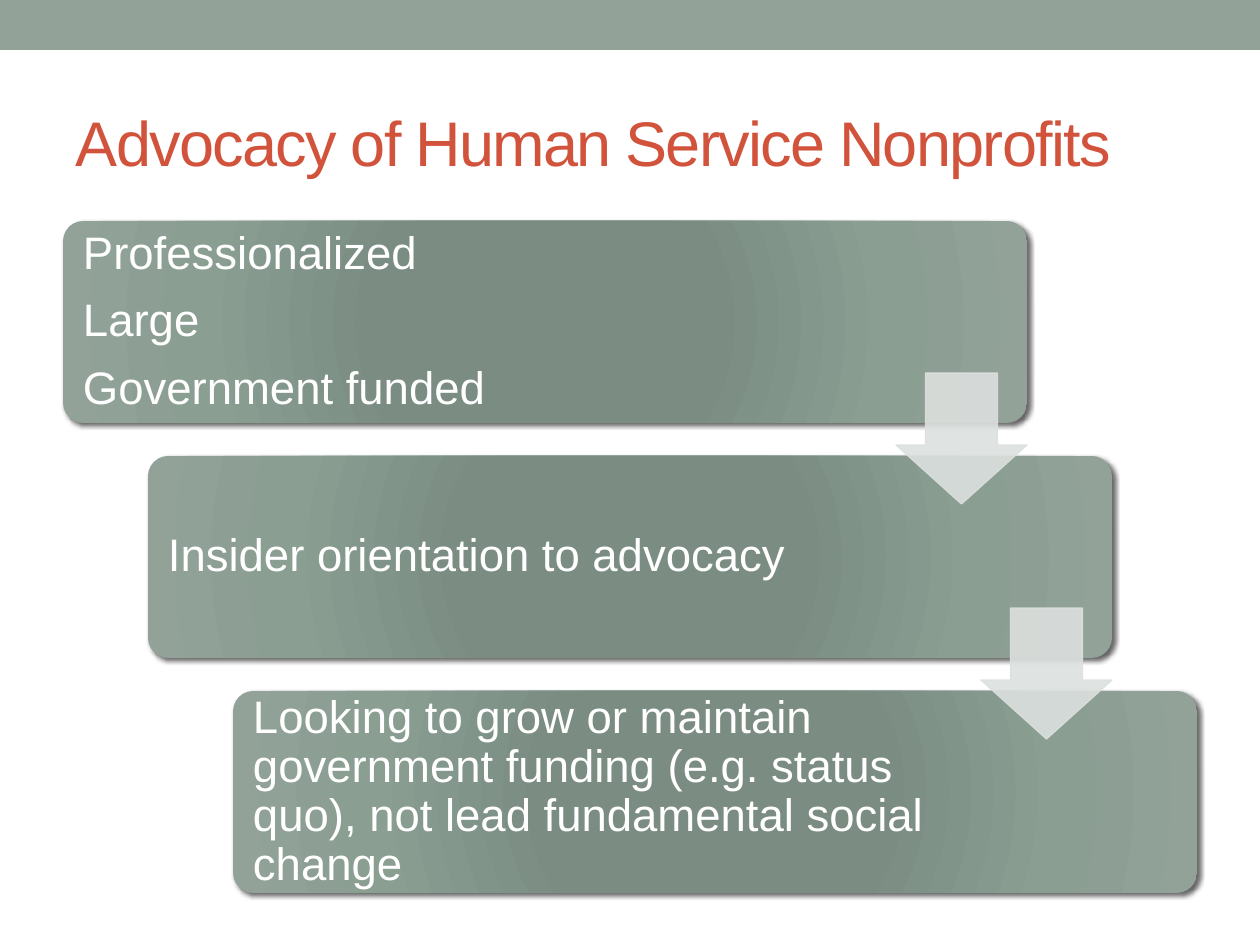
from lxml.etree import SubElement
from pptx import Presentation
from pptx.dml.color import RGBColor
from pptx.enum.shapes import MSO_SHAPE
from pptx.enum.text import MSO_ANCHOR
from pptx.oxml import parse_xml
from pptx.oxml.ns import nsdecls, qn
from pptx.util import Emu, Pt

PX = 914400 / 126

SAGE = RGBColor(0x93, 0xA2, 0x99)
RUST = RGBColor(0xD2, 0x53, 0x3C)
WHITE = RGBColor(0xFF, 0xFF, 0xFF)
MIST = RGBColor(0xDC, 0xE0, 0xDE)
BLACK = RGBColor(0, 0, 0)
STOPS = [(0, RGBColor(0x7B, 0x8E, 0x82)), (34, RGBColor(0x7B, 0x8D, 0x83)),
         (70, RGBColor(0x8A, 0x9E, 0x92)), (100, SAGE)]


def px(n):
    return Emu(round(n * PX))


class Deck:
    font = "Arial"

    def __init__(self, width, height):
        self.prs = Presentation()
        self.prs.slide_width, self.prs.slide_height = px(width), px(height)
        self.s = self.prs.slides.add_slide(self.prs.slide_layouts[6])

    def shape(self, kind, x, y, w, h, fill, adj=()):
        sp = self.s.shapes.add_shape(kind, px(x), px(y), px(w), px(h))
        sp.shadow.inherit = False
        sp.fill.solid()
        sp.fill.fore_color.rgb = fill
        sp.line.fill.background()
        for i, value in enumerate(adj):
            sp.adjustments[i] = value
        return sp

    def card(self, x, y, w, h):
        sp = self.shape(MSO_SHAPE.ROUNDED_RECTANGLE, x, y, w, h, SAGE, [0.1])
        spPr = sp.fill._xPr
        # Radial gradient
        stops = "".join(f'<a:gs pos="{pos * 1000}"><a:srgbClr val="{color}"/></a:gs>'
                        for pos, color in STOPS)
        grad = parse_xml(
            f'<a:gradFill {nsdecls("a")} rotWithShape="1"><a:gsLst>{stops}</a:gsLst>'
            '<a:path path="circle"><a:fillToRect l="100000" t="100000" r="100000" '
            'b="100000"/></a:path></a:gradFill>')
        spPr.replace(spPr.find(qn("a:solidFill")), grad)
        # Drop shadow
        shadow = SubElement(spPr.find(qn("a:effectLst")), qn("a:outerShdw"),
                            blurRad=str(Pt(3)), dist=str(Pt(2)),
                            dir=str(45 * 60000), algn="ctr", rotWithShape="0")
        color = SubElement(shadow, qn("a:srgbClr"), val=str(BLACK))
        SubElement(color, qn("a:alpha"), val="60000")

    def arrow(self, x, y, size):
        sp = self.shape(MSO_SHAPE.DOWN_ARROW, x, y, size, size, MIST, [0.55, 0.45])
        sp.line.color.rgb = MIST
        sp.line.width = Pt(0.75)
        for color in sp.fill._xPr.iter(qn("a:srgbClr")):
            SubElement(color, qn("a:alpha"), val="90000")

    def text(self, x, y, w, h, lines, size, color, inset=(13, 6),
             line_spacing=None, after=None, tracking=None):
        tf = self.s.shapes.add_textbox(px(x), px(y), px(w), px(h)).text_frame
        tf.word_wrap = True
        tf.vertical_anchor = MSO_ANCHOR.MIDDLE
        tf.margin_left = tf.margin_right = px(inset[0])
        tf.margin_top = tf.margin_bottom = px(inset[1])
        for i, line in enumerate(lines):
            p = tf.add_paragraph() if i else tf.paragraphs[0]
            p.line_spacing = line_spacing
            p.space_after = after
            r = p.add_run()
            r.text = line
            r.font.name, r.font.size = self.font, Pt(size)
            r.font.color.rgb = color
            if tracking is not None:
                r.font._element.set("spc", str(tracking * 100))


def main():
    deck = Deck(1260, 945)

    # Top band and title
    deck.shape(MSO_SHAPE.RECTANGLE, 0, 0, 1260, 50, SAGE)
    deck.text(63, 73, 1134, 136, ["Advocacy of Human Service Nonprofits"],
              36, RUST, tracking=-1)

    # Staircase of steps
    left, top, dx, dy = 63, 221, 85, 235
    steps = [
        ["Professionalized", "Large", "Government funded"],
        ["Insider orientation to advocacy"],
        ["Looking to grow or maintain government funding (e.g. status quo), "
         "not lead fundamental social change"],
    ]
    for i, lines in enumerate(steps):
        x, y = left + i * dx, top + i * dy
        deck.card(x, y, 964, 202)
        deck.text(x + 6, y + 6, 736, 190, lines, 26, WHITE, inset=(14, 14),
                  line_spacing=0.9, after=Pt(10.5))

    # Arrows between steps
    for i in range(len(steps) - 1):
        deck.arrow(896 + i * dx, 373 + i * dy, 131)

    deck.prs.save("out.pptx")


if __name__ == "__main__":
    main()
